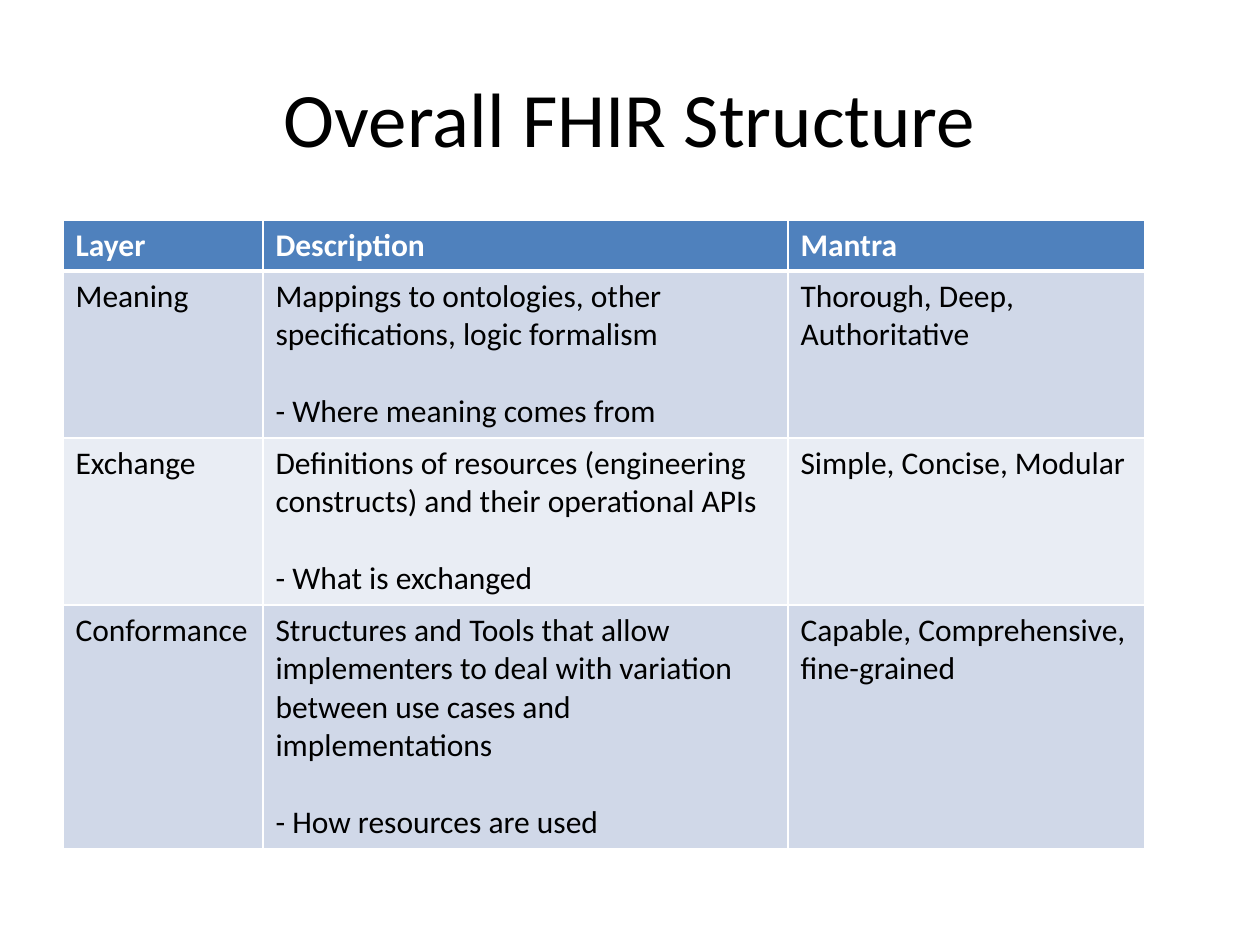
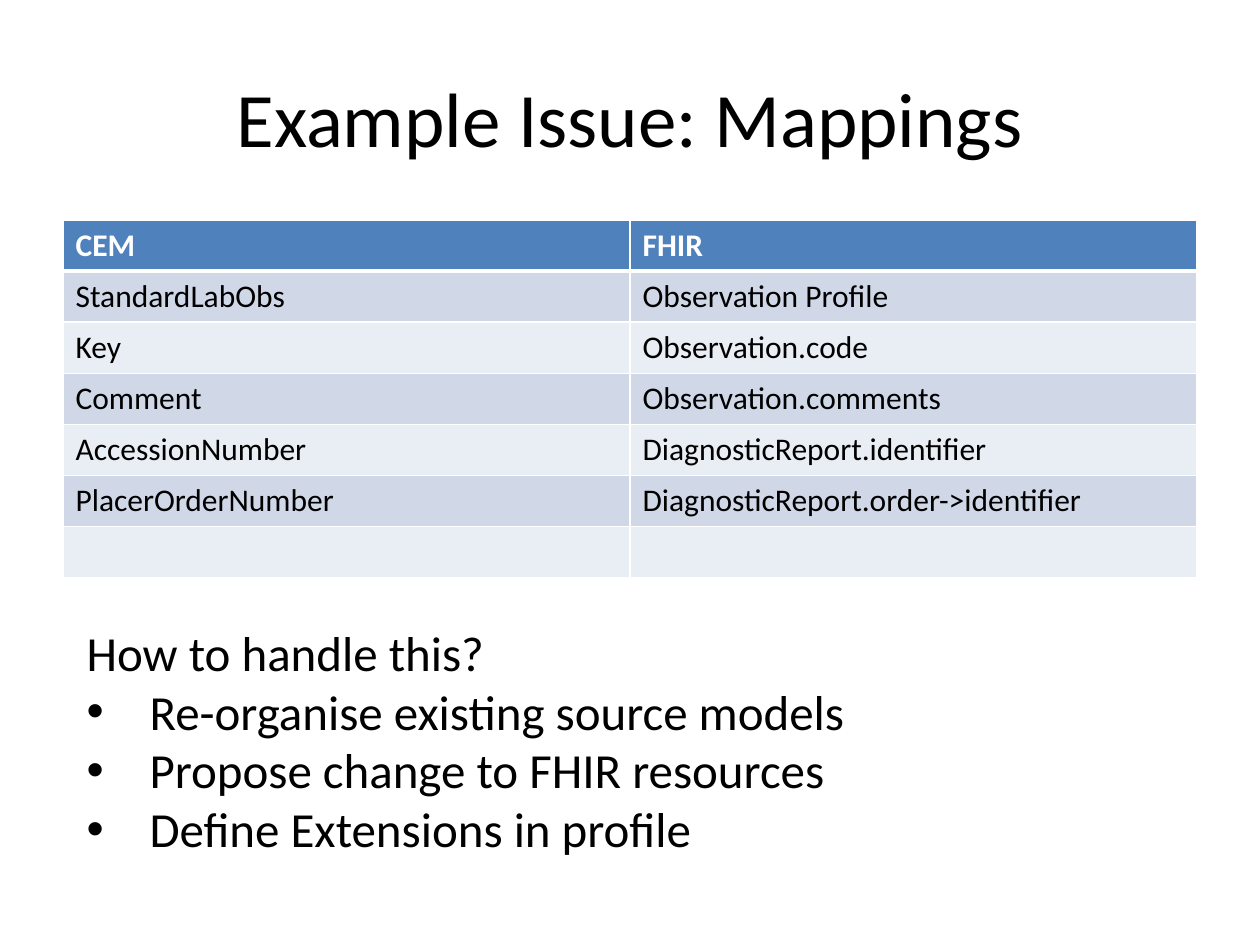
from lxml import etree
from pptx import Presentation
from pptx.dml.color import RGBColor
from pptx.enum.text import MSO_ANCHOR, MSO_AUTO_SIZE, PP_ALIGN
from pptx.oxml.ns import qn
from pptx.util import Pt

BLACK = RGBColor(0x00, 0x00, 0x00)
WHITE = RGBColor(0xFF, 0xFF, 0xFF)
HEADER_BLUE = RGBColor(0x4F, 0x81, 0xBD)
BANDS = (RGBColor(0xD0, 0xD8, 0xE8), RGBColor(0xE9, 0xED, 0xF4))
CENTER = PP_ALIGN.CENTER
MIDDLE = MSO_ANCHOR.MIDDLE
TOP = MSO_ANCHOR.TOP
NO_AUTOFIT = MSO_AUTO_SIZE.NONE

FONT = "Calibri"
PX = 914400 / 126
TITLE_ONLY = 5
TITLE_AND_BODY = 1
LEFT = 63
TABLE_TOP = 220
ROW_HEIGHT = 51
BULLET_INDENT = 63

LAYERS = [
    ["Layer", "Description", "Mantra"],
    ["Meaning",
     "Mappings to ontologies, other specifications, logic formalism\n"
     "- Where meaning comes from",
     "Thorough, Deep, Authoritative"],
    ["Exchange",
     "Definitions of resources (engineering constructs) and their operational APIs\n"
     "- What is exchanged",
     "Simple, Concise, Modular"],
    ["Conformance",
     "Structures and Tools that allow implementers to deal with variation "
     "between use cases and implementations\n"
     "- How resources are used",
     "Capable, Comprehensive, fine-grained"],
]
MAPPINGS = [
    ["CEM", "FHIR"],
    ["StandardLabObs", "Observation Profile"],
    ["Key", "Observation.code"],
    ["Comment", "Observation.comments"],
    ["AccessionNumber", "DiagnosticReport.identifier"],
    ["PlacerOrderNumber", "DiagnosticReport.order->identifier"],
    ["", ""],
]
OPTIONS = [
    "Re-organise existing source models",
    "Propose change to FHIR resources",
    "Define Extensions in profile",
]


def px(length):
    return round(length * PX)


class DeckBuilder:
    def __init__(self):
        self.deck = Presentation()
        self.deck.slide_width = px(1260)
        self.deck.slide_height = px(945)
        self.page = None

    def add_page(self, layout, title):
        self.page = self.deck.slides.add_slide(self.deck.slide_layouts[layout])
        box = self.page.shapes.title
        self.place(box, LEFT, 38, 1134, 157)
        frame = box.text_frame
        frame.text = title
        frame.vertical_anchor = MIDDLE
        frame.paragraphs[0].alignment = CENTER
        self.style(frame, 44)

    def place(self, box, left, top, width, height):
        box.left, box.top = px(left), px(top)
        box.width, box.height = px(width), px(height)

    def style(self, frame, size, color=BLACK, bold=False):
        for para in frame.paragraphs:
            for span in para.runs:
                span.font.name = FONT
                span.font.size = Pt(size)
                span.font.bold = bold
                span.font.color.rgb = color

    def table(self, rows, widths, heights):
        frame = self.page.shapes.add_table(
            len(rows), len(widths), px(LEFT), px(TABLE_TOP),
            px(sum(widths)), px(sum(heights)))
        table = frame.table
        for column, width in zip(table.columns, widths):
            column.width = px(width)
        for row, height in zip(table.rows, heights):
            row.height = px(height)
        for row_index, texts in enumerate(rows):
            for column_index, text in enumerate(texts):
                self.cell(table.cell(row_index, column_index), text, row_index)

    def cell(self, cell, text, row_index):
        header = row_index == 0
        cell.fill.solid()
        cell.fill.fore_color.rgb = HEADER_BLUE if header else BANDS[(row_index - 1) % 2]
        cell.text_frame.text = text
        for para in cell.text_frame.paragraphs[1:]:
            para.space_before = Pt(22)
        self.style(cell.text_frame, 18, WHITE if header else BLACK, header)
        top_weight = 3 if row_index == 1 else 1
        bottom_weight = 3 if header else 1
        self.borders(cell, {"L": 1, "R": 1, "T": top_weight, "B": bottom_weight})

    def borders(self, cell, weights):
        properties = cell._tc.get_or_add_tcPr()
        for position, (side, weight) in enumerate(weights.items()):
            line = etree.Element(qn(f"a:ln{side}"), w=str(Pt(weight)))
            fill = etree.SubElement(line, qn("a:solidFill"))
            etree.SubElement(fill, qn("a:srgbClr"), val=str(WHITE))
            properties.insert(position, line)

    def bullet_list(self, heading, items, left, top, width, height):
        box = self.page.placeholders[1]
        self.place(box, left, top, width, height)
        frame = box.text_frame
        frame.text = "\n".join([heading, *items])
        frame.word_wrap = True
        frame.auto_size = NO_AUTOFIT
        frame.vertical_anchor = TOP
        for index, para in enumerate(frame.paragraphs):
            para.space_before = Pt(0)
            self.bullet(para, BULLET_INDENT if index else 0)
        self.style(frame, 28)

    def bullet(self, para, indent):
        properties = para._p.get_or_add_pPr()
        properties.set("marL", str(px(indent)))
        properties.set("indent", str(-px(indent)))
        if indent:
            etree.SubElement(properties, qn("a:buFont"), typeface="Arial")
            etree.SubElement(properties, qn("a:buChar"), char="•")
        else:
            etree.SubElement(properties, qn("a:buNone"))


def main():
    builder = DeckBuilder()

    builder.add_page(TITLE_ONLY, "Overall FHIR Structure")
    builder.table(LAYERS, [200, 525, 357], [ROW_HEIGHT, 167, 167, 243])

    builder.add_page(TITLE_AND_BODY, "Example Issue: Mappings")
    builder.table(MAPPINGS, [567, 567], [ROW_HEIGHT] * len(MAPPINGS))
    builder.bullet_list("How to handle this?", OPTIONS, 74, 616, 791, 251)

    builder.deck.save("out.pptx")


if __name__ == "__main__":
    main()
